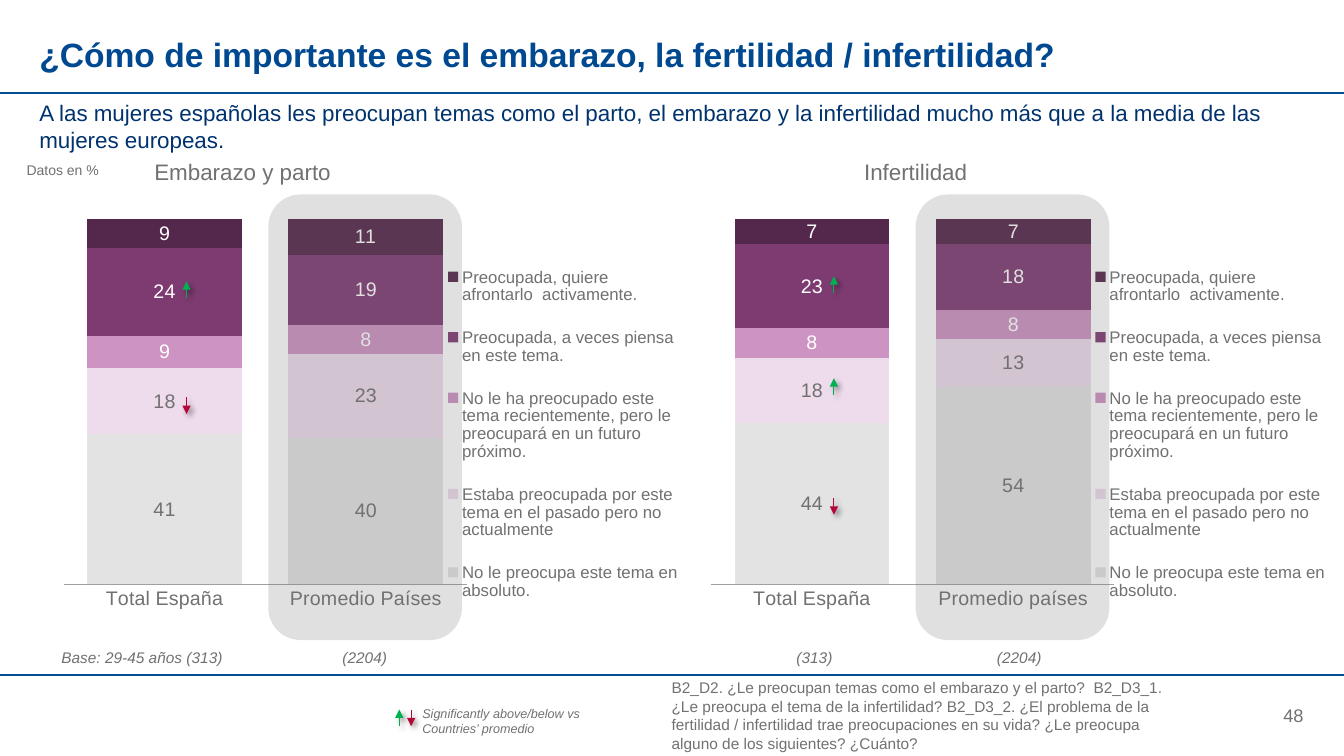
"""Build the slide on how much pregnancy and infertility worry women."""
from lxml import etree
from pptx import Presentation
from pptx import util as u
from pptx.chart import data as cd
from pptx.dml import color as col
from pptx.enum import chart as ch, shapes as sh, text as tx
from pptx.oxml import ns, parse_xml

COLORS = {
    "title": "004990", "rule": "004D96", "subtitle": "00336E", "grey": "717171",
    "white": "FFFFFF", "axis": "A0A0A0", "up": "00B050", "down": "B30838",
}
FONT = "Arial"
PANEL_STEP = 16.31
ARROW_LENGTH = 0.42
ANSWERS = [
    ("No le preocupa este tema en absoluto.", "E3E3E3", "grey"),
    ("Estaba preocupada por este tema en el pasado pero no actualmente", "EEDBEB", "grey"),
    ("No le ha preocupado este tema recientemente, pero le preocupará en un futuro próximo.",
     "CD93C2", "white"),
    ("Preocupada, a veces piensa en este tema.", "7E3B71", "white"),
    ("Preocupada, quiere afrontarlo  activamente.", "54274C", "white"),
]
PANELS = [
    (("Total España", "Promedio Países"), [(41, 40), (18, 23), (9, 8), (24, 19), (9, 11)]),
    (("Total España", "Promedio países"), [(44, 54), (18, 13), (8, 8), (23, 18), (7, 7)]),
]
QUESTIONS = (
    "B2_D2. ¿Le preocupan temas como el embarazo y el parto?  B2_D3_1. ¿Le preocupa el tema "
    "de la infertilidad? B2_D3_2. ¿El problema de la fertilidad / infertilidad trae "
    "preocupaciones en su vida? ¿Le preocupa alguno de los siguientes? ¿Cuánto?"
)
SUBTITLE = (
    "A las mujeres españolas les preocupan temas como el parto, el embarazo y la infertilidad "
    "mucho más que a la media de las mujeres europeas."
)
LEFT, CENTER, RIGHT = tx.PP_ALIGN.LEFT, tx.PP_ALIGN.CENTER, tx.PP_ALIGN.RIGHT
TOP, MIDDLE = tx.MSO_ANCHOR.TOP, tx.MSO_ANCHOR.MIDDLE


def rgb(name):
    """Return the colour for a palette name or a hex string."""
    return col.RGBColor.from_string(COLORS.get(name, name))


def apply(target, values):
    """Set every attribute listed in a dict."""
    for name, value in values.items():
        setattr(target, name, value)


def style_font(font, size, color, **extra):
    """Give a font its face, size and colour."""
    apply(font, {"name": FONT, "size": u.Pt(size), **extra})
    font.color.rgb = rgb(color)


def fill_text(shape, wording, size, color="grey", align=LEFT, anchor=TOP, wrap=True, **extra):
    """Write one formatted paragraph without margins."""
    frame = shape.text_frame
    frame.text = wording
    apply(frame, {"margin_left": 0, "margin_top": 0, "margin_right": 0, "margin_bottom": 0,
                  "word_wrap": wrap, "vertical_anchor": anchor,
                  "auto_size": tx.MSO_AUTO_SIZE.NONE})
    paragraph = frame.paragraphs[0]
    apply(paragraph, {"alignment": align, "space_before": u.Pt(0)})
    style_font(paragraph.runs[0].font, size, color, **extra)


def add_label(slide, box, wording, size, **fmt):
    """Add a text box."""
    fill_text(slide.shapes.add_textbox(*map(u.Cm, box)), wording, size, **fmt)


def fill_placeholder(placeholder, box, wording, size, color, **fmt):
    """Move a template placeholder and write in it."""
    sides = ("left", "top", "width", "height")
    apply(placeholder, dict(zip(sides, map(u.Cm, box))))
    fill_text(placeholder, wording, size, color, **fmt)


def add_line(slide, start, end, color, width):
    """Add a straight connector without shadow."""
    line = slide.shapes.add_connector(
        sh.MSO_CONNECTOR.STRAIGHT, *map(u.Cm, (*start, *end)))
    line.line.color.rgb = rgb(color)
    line.line.width = u.Pt(width)
    effects = etree.SubElement(line.element.spPr, ns.qn("a:effectLst"))
    return line, effects


def add_arrow(slide, x, top, direction):
    """Add a small shadowed significance arrow."""
    ends = [(x, top), (x, top + ARROW_LENGTH)]
    if direction == "up":
        ends.reverse()
    line, effects = add_line(slide, *ends, direction, 0.75)
    etree.SubElement(line.line._get_or_add_ln(), ns.qn("a:tailEnd"), type="triangle")
    effects.append(parse_xml(
        f'<a:outerShdw {ns.nsdecls("a")} blurRad="{u.Pt(4)}" dist="{u.Pt(3)}" dir="2700000">'
        '<a:srgbClr val="000000"><a:alpha val="40000"/></a:srgbClr></a:outerShdw>'))


def add_band(slide, left):
    """Add the translucent band over the country average."""
    band = slide.shapes.add_shape(
        sh.MSO_SHAPE.ROUNDED_RECTANGLE, *map(u.Cm, (left, 4.9, 4.88, 11.23)))
    band.shadow.inherit = False
    band.fill.solid()
    band.fill.fore_color.rgb = rgb("grey")
    band.line.fill.background()
    tint = band.element.spPr.find(".//" + ns.qn("a:srgbClr"))
    etree.SubElement(tint, ns.qn("a:alpha"), val="21000")


def place_chart_part(part, index, bounds, inner=False):
    """Give a chart part a manual layout in fractions of the chart."""
    for old in part.findall(ns.qn("c:layout")):
        part.remove(old)
    values = [("layoutTarget", "inner")] if inner else []
    values += [("xMode", "edge"), ("yMode", "edge"), *zip("xywh", bounds)]
    body = "".join(f'<c:{name} val="{value}"/>' for name, value in values)
    part.insert(index, parse_xml(
        f'<c:layout {ns.nsdecls("c")}><c:manualLayout>{body}</c:manualLayout></c:layout>'))


def add_worry_chart(slide, left, groups, shares):
    """Add a stacked column chart of the answers."""
    answers = cd.CategoryChartData()
    answers.categories = groups
    for (name, _, _), values in zip(ANSWERS, shares):
        answers.add_series(name, values)
    chart = slide.shapes.add_chart(
        ch.XL_CHART_TYPE.COLUMN_STACKED, *map(u.Cm, (left, 5.11, PANEL_STEP, 11.43)),
        answers).chart
    style_font(chart.font, 14, "grey")
    apply(chart, {"has_title": False, "has_legend": True})
    apply(chart.legend, {"position": ch.XL_LEGEND_POSITION.RIGHT, "include_in_layout": False})
    style_font(chart.legend.font, 12, "grey")
    apply(chart.value_axis, {"minimum_scale": 0, "maximum_scale": 100, "major_unit": 20,
                             "has_major_gridlines": False, "visible": False})
    chart.category_axis.major_tick_mark = ch.XL_TICK_MARK.NONE
    chart.category_axis.format.line.color.rgb = rgb("axis")
    plot = chart.plots[0]
    apply(plot, {"gap_width": 30, "overlap": 100, "vary_by_categories": False})
    for series, (_, fill, label) in zip(plot.series, ANSWERS):
        series.format.fill.solid()
        series.format.fill.fore_color.rgb = rgb(fill)
        series.data_labels.show_value = True
        style_font(series.data_labels.font, 14, label)
    root = chart.element
    place_chart_part(root.find(".//" + ns.qn("c:plotArea")), 0,
                     (0.035, 0.035, 0.622, 0.806), inner=True)
    place_chart_part(root.find(".//" + ns.qn("c:legend")), 1, (0.635, 0.09, 0.36, 0.84))


def main():
    """Build and save the slide."""
    deck = Presentation()
    apply(deck, {"slide_width": u.Cm(33.86), "slide_height": u.Cm(19.05)})
    slide = deck.slides.add_slide(deck.slide_layouts[4])
    for rule_y in (2.34, 17.02):
        add_line(slide, (0, rule_y), (33.86, rule_y), "rule", 1.5)

    title, subtitle, left_content, questions, right_content = slide.placeholders
    for unused in (left_content, right_content):
        unused.element.getparent().remove(unused.element)
    fill_placeholder(title, (0.99, 0.79, 31.85, 1.12),
                     "¿Cómo de importante es el embarazo, la fertilidad / infertilidad?",
                     24, "title", anchor=MIDDLE, bold=True)
    fill_placeholder(subtitle, (0.99, 2.51, 31.88, 1.09), SUBTITLE, 16, "subtitle", bold=False)
    fill_placeholder(questions, (16.92, 17.75, 12.98, 0.56), QUESTIONS, 11, "grey",
                     anchor=MIDDLE, bold=False)

    add_label(slide, (30.15, 17.75, 2.69, 0.56), "48", 13, align=RIGHT, anchor=MIDDLE)
    add_label(slide, (0.41, 4.06, 2.34, 0.43), "Datos en %", 10, align=CENTER)
    for left, heading in ((3.89, "Embarazo y parto"), (21.77, "Infertilidad")):
        add_label(slide, (left, 3.99, 4.5, 0.69), heading, 16, wrap=False)
    for index, (groups, shares) in enumerate(PANELS):
        shift = index * PANEL_STEP
        add_worry_chart(slide, 1.04 + shift, groups, shares)
        add_band(slide, 6.76 + shift)
    for left, base in ((1.04, "Base: 29-45 años (313)"), (6.65, "(2204)"),
                       (17.98, "(313)"), (23.14, "(2204)")):
        add_label(slide, (left, 16.33, 5.08, 0.48), base, 11, align=CENTER, italic=True)

    add_label(slide, (10.64, 17.78, 5.08, 0.76),
              "Significantly above/below vs Countries’ promedio", 9, italic=True)
    for x, top, direction in ((10.06, 17.88, "up"), (10.36, 17.88, "down"),
                              (4.7, 7.09, "up"), (4.7, 10.01, "down"),
                              (21.01, 6.96, "up"), (21.01, 9.53, "up"),
                              (21.01, 12.55, "down")):
        add_arrow(slide, x, top, direction)
    deck.save("out.pptx")


if __name__ == "__main__":
    main()
